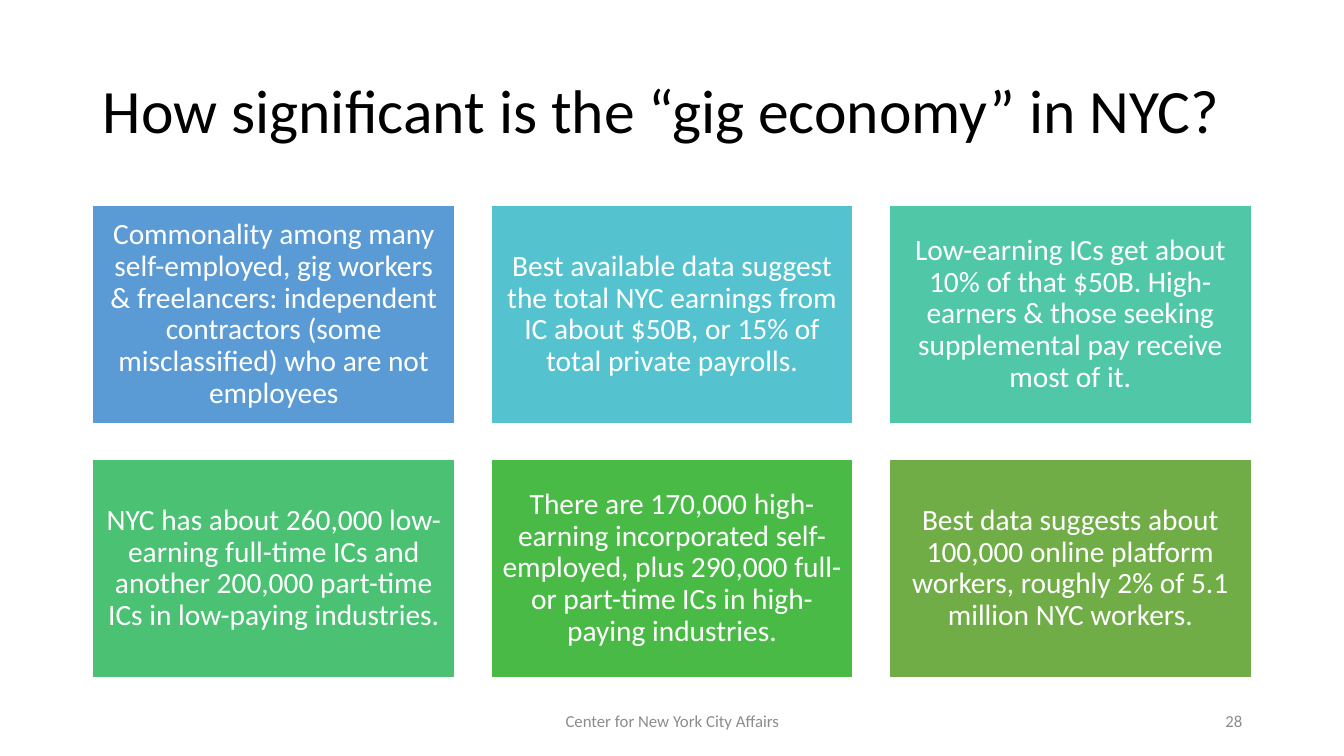
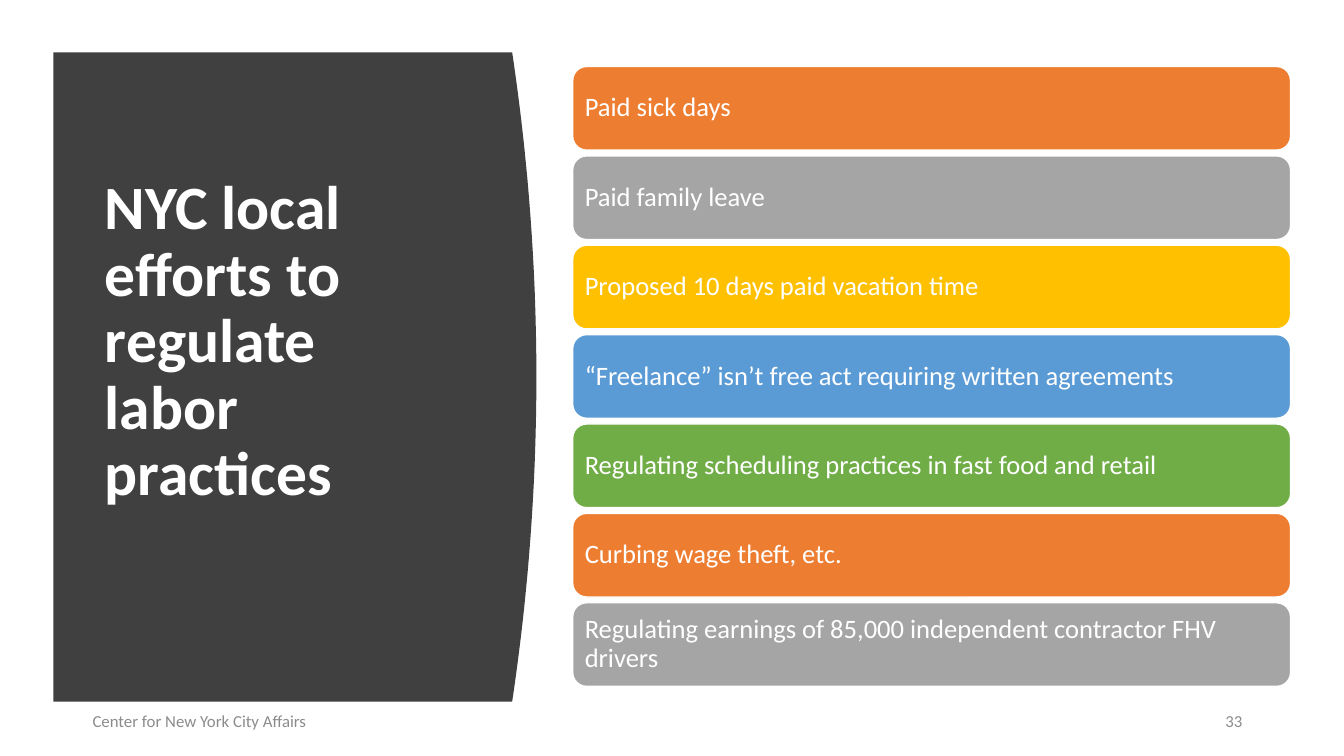
from math import cos, pi, sin

from pptx import Presentation
from pptx.dml.color import RGBColor
from pptx.enum.shapes import MSO_SHAPE as SHAPE
from pptx.enum.text import MSO_ANCHOR as ANCHOR, MSO_AUTO_SIZE as AUTO_SIZE, PP_ALIGN as ALIGN
from pptx.util import Inches, Pt

FONT = "Calibri"
BLACK = RGBColor(0x00, 0x00, 0x00)
WHITE = RGBColor(0xFF, 0xFF, 0xFF)
FOOTER_GRAY = RGBColor(0x8C, 0x8C, 0x8C)
CHARCOAL = RGBColor(0x40, 0x40, 0x40)
BLUE = RGBColor(0x5B, 0x9B, 0xD5)
CYAN = RGBColor(0x55, 0xC3, 0xCF)
TEAL = RGBColor(0x50, 0xC8, 0xA7)
MINT = RGBColor(0x4B, 0xC1, 0x74)
LEAF = RGBColor(0x4A, 0xBA, 0x46)
GREEN = RGBColor(0x70, 0xAD, 0x47)
ORANGE = RGBColor(0xED, 0x7D, 0x31)
GRAY = RGBColor(0xA5, 0xA5, 0xA5)
GOLD = RGBColor(0xFF, 0xC0, 0x00)

FINDINGS = [
    ("Commonality among many self-employed, gig workers & freelancers: independent "
     "contractors (some misclassified) who are not employees", BLUE),
    ("Best available data suggest the total NYC earnings from IC about $50B, "
     "or 15% of total private payrolls.", CYAN),
    ("Low-earning ICs get about 10% of that $50B. High-earners & those seeking "
     "supplemental pay receive most of it.", TEAL),
    ("NYC has about 260,000 low-earning full-time ICs and another 200,000 "
     "part-time ICs in low-paying industries.", MINT),
    ("There are 170,000 high-earning incorporated self-employed, plus 290,000 "
     "full-or part-time ICs in high-paying industries.", LEAF),
    ("Best data suggests about 100,000 online platform workers, roughly 2% of "
     "5.1 million NYC workers.", GREEN),
]
EFFORTS = [
    ("Paid sick days", ORANGE),
    ("Paid family leave", GRAY),
    ("Proposed 10 days paid vacation time", GOLD),
    ("“Freelance” isn’t free act requiring written agreements", BLUE),
    ("Regulating scheduling practices in fast food and retail", GREEN),
    ("Curbing wage theft, etc.", ORANGE),
    ("Regulating earnings of 85,000 independent contractor FHV drivers", GRAY),
]


def set_text(sp, text, size, color, align=ALIGN.LEFT, bold=False, spacing=0.9):
    """Fill a shape with one formatted, vertically centred paragraph."""
    tf = sp.text_frame
    tf.text = text
    tf.word_wrap = True
    tf.auto_size = AUTO_SIZE.NONE
    tf.vertical_anchor = ANCHOR.MIDDLE
    p = tf.paragraphs[0]
    p.alignment = align
    p.line_spacing = spacing
    font = p.runs[0].font
    font.name, font.size, font.bold = FONT, Pt(size), bold
    font.color.rgb = color


def add_title(slide, text, left, top, width, height, color, bold=False):
    """Place and format the title placeholder."""
    title = slide.shapes.title
    title.left, title.top = Inches(left), Inches(top)
    title.width, title.height = Inches(width), Inches(height)
    set_text(title, text, 44, color, bold=bold)


def add_footer(slide, number, left, align):
    """Add the organisation name and the page number."""
    for text, x, width, side in (
        ("Center for New York City Affairs", left, 4.5, align),
        (number, 11.73, 0.69, ALIGN.RIGHT),
    ):
        sp = slide.shapes.add_textbox(Inches(x), Inches(6.95), Inches(width), Inches(0.4))
        set_text(sp, text, 12, FOOTER_GRAY, side, spacing=1.0)


def add_card(slide, preset, left, top, width, height, fill, text, size, inset, align):
    """Add a filled, white-edged shape holding white text."""
    sp = slide.shapes.add_shape(preset, Inches(left), Inches(top), Inches(width), Inches(height))
    sp.shadow.inherit = False
    sp.fill.solid()
    sp.fill.fore_color.rgb = fill
    sp.line.color.rgb = WHITE
    sp.line.width = Pt(1)
    set_text(sp, text, size, WHITE, align)
    tf = sp.text_frame
    tf.margin_left = tf.margin_right = tf.margin_top = tf.margin_bottom = Inches(inset)


def add_curved_panel(slide, left, top, right, bottom, bulge, steps=48):
    """Add a dark panel whose right edge bows outward as a parabola."""
    middle, half = (top + bottom) / 2, (bottom - top) / 2
    edge = []
    for i in range(steps + 1):
        angle = pi * i / steps
        edge.append((Inches(right + bulge * sin(angle) ** 2), Inches(middle - half * cos(angle))))
    builder = slide.shapes.build_freeform(Inches(left), Inches(top))
    builder.add_line_segments(edge + [(Inches(left), Inches(bottom))], close=True)
    sp = builder.convert_to_shape()
    sp.shadow.inherit = False
    sp.fill.solid()
    sp.fill.fore_color.rgb = CHARCOAL
    sp.line.fill.background()
    slide.shapes.title.element.addprevious(sp.element)


def add_findings_slide(prs):
    """Build the grid of gig economy findings."""
    slide = prs.slides.add_slide(prs.slide_layouts[5])
    add_title(slide, "How significant is the “gig economy” in NYC?", 0.92, 0.4, 11.5, 1.45, BLACK)
    add_footer(slide, "28", 4.42, ALIGN.CENTER)
    width, height, gap = 3.59, 2.16, 0.36
    for i, (text, fill) in enumerate(FINDINGS):
        row, col = divmod(i, 3)
        add_card(slide, SHAPE.RECTANGLE, 0.92 + col * (width + gap), 2.04 + row * (height + gap),
                 width, height, fill, text, 21, 0.09, ALIGN.CENTER)


def add_efforts_slide(prs):
    """Build the list of local labor regulations."""
    slide = prs.slides.add_slide(prs.slide_layouts[5])
    add_curved_panel(slide, 0.53, 0.52, 5.08, 6.96, 0.24)
    add_title(slide, "NYC local efforts to regulate labor practices",
              0.94, 1.11, 3.7, 4.58, WHITE, bold=True)
    add_footer(slide, "33", 0.82, ALIGN.LEFT)
    top, bottom, height = 0.66, 6.81, 0.83
    pitch = (bottom - top - height) / (len(EFFORTS) - 1)
    for i, (text, fill) in enumerate(EFFORTS):
        add_card(slide, SHAPE.ROUNDED_RECTANGLE, 5.68, top + i * pitch, 7.12, height,
                 fill, text, 19, 0.08, ALIGN.LEFT)


def main():
    """Build and save the presentation."""
    prs = Presentation()
    prs.slide_width, prs.slide_height = Inches(13.33), Inches(7.5)
    add_findings_slide(prs)
    add_efforts_slide(prs)
    prs.save("out.pptx")


if __name__ == "__main__":
    main()
